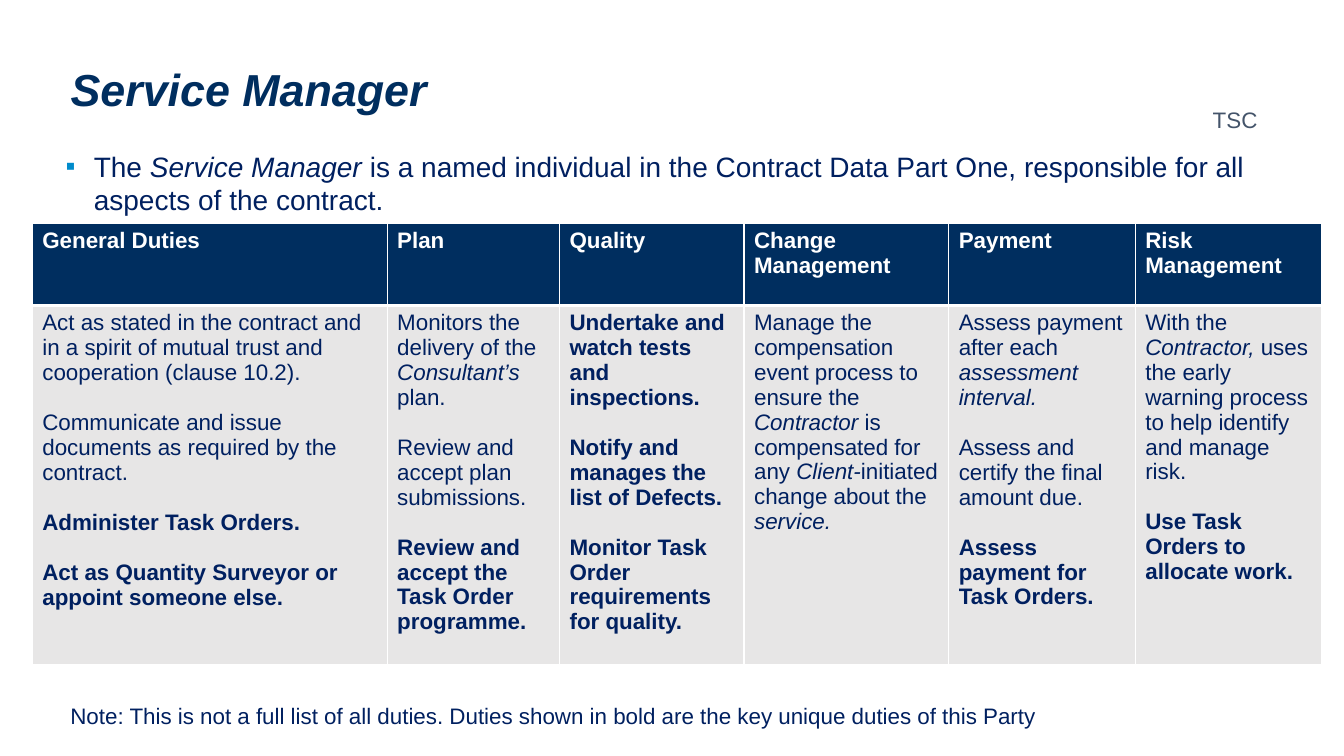
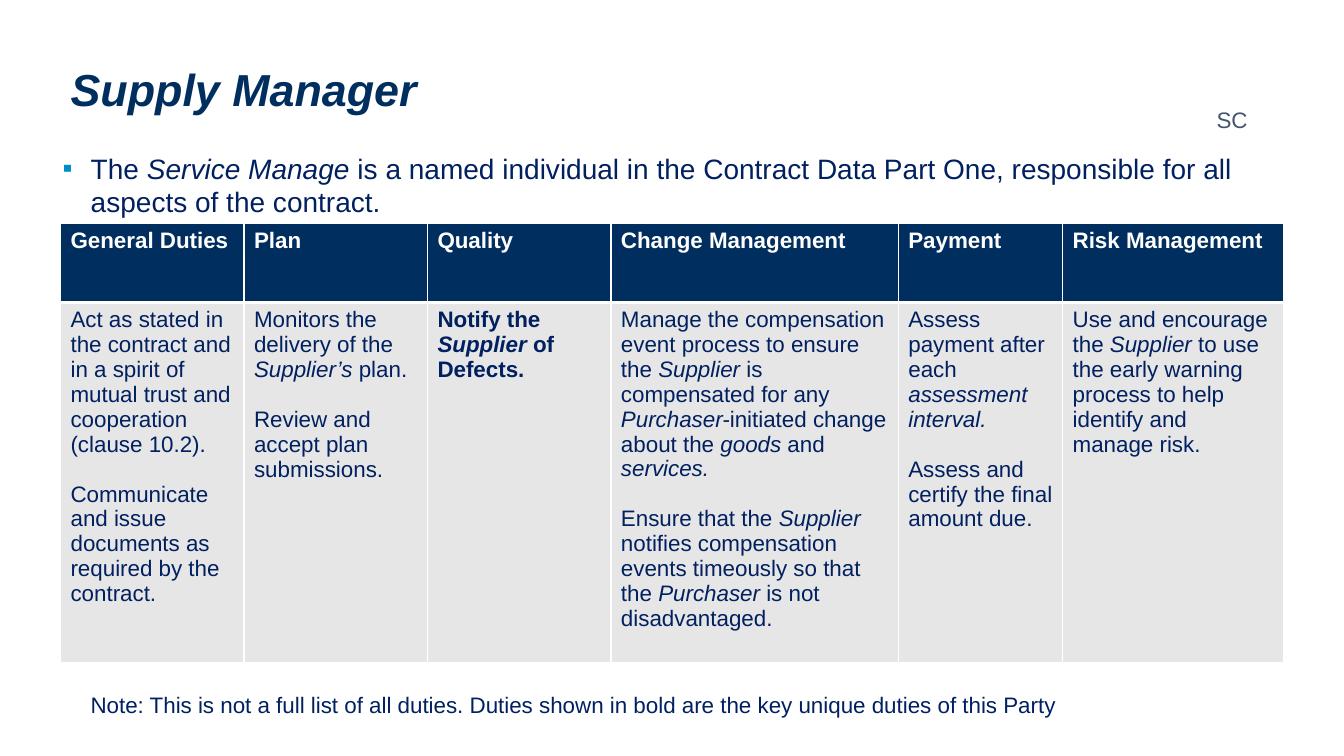
from lxml import etree
from pptx import Presentation
from pptx.dml.color import RGBColor
from pptx.enum.text import MSO_ANCHOR as Anchor, MSO_AUTO_SIZE as AutoSize, PP_ALIGN as Align
from pptx.oxml.ns import qn
from pptx.util import Inches, Pt

COLORS = {
    "navy": "002E5F",
    "ink": "002060",
    "slate": "44546A",
    "bullet": "008BCB",
    "cell": "E7E6E6",
    "white": "FFFFFF",
}
FONT = "Arial"

HEADERS = ["General Duties", "Plan", "Quality", "Change Management", "Payment", "Risk Management"]
NOTE = ("Note: This is not a full list of all duties. "
        "Duties shown in bold are the key unique duties of this Party")

GENERAL_DUTIES = [
    "Act as stated in the contract and in a spirit of mutual trust and cooperation (clause 10.2).",
    "Communicate and issue documents as required by the contract.",
]
PLAN_REVIEW = "Review and accept plan submissions."
PAYMENT_DUTIES = [
    "Assess payment after each *assessment interval.*",
    "Assess and certify the final amount due.",
]

SERVICE_DUTIES = [
    GENERAL_DUTIES + ["**Administer Task Orders.**",
                      "**Act as Quantity Surveyor or appoint someone else.**"],
    ["Monitors the delivery of the *Consultant’s* plan.", PLAN_REVIEW,
     "**Review and accept the Task Order programme.**"],
    ["**Undertake and watch tests and inspections.**",
     "**Notify and manages the list of Defects.**",
     "**Monitor Task Order requirements for quality.**"],
    ["Manage the compensation event process to ensure the *Contractor* is compensated "
     "for any *Client-*initiated change about the *service.*"],
    PAYMENT_DUTIES + ["**Assess payment for Task Orders.**"],
    ["With the *Contractor,* uses the early warning process to help identify and manage risk.",
     "**Use Task Orders to allocate work.**"],
]
SUPPLY_DUTIES = [
    GENERAL_DUTIES,
    ["Monitors the delivery of the *Supplier’s* plan.", PLAN_REVIEW],
    ["**Notify the *Supplier* of Defects.**"],
    ["Manage the compensation event process to ensure the *Supplier* is compensated "
     "for any *Purchaser-*initiated change about the *goods* and *services.*",
     "Ensure that the *Supplier* notifies compensation events timeously so that "
     "the *Purchaser* is not disadvantaged."],
    PAYMENT_DUTIES,
    ["Use and encourage the *Supplier* to use the early warning process "
     "to help identify and manage risk."],
]


def rgb(color):
    return RGBColor.from_string(COLORS[color])


def write(frame, *texts, size=16, color="ink", bold=False, italic=False,
          align=Align.LEFT, gap=0, line=None, bullet=None):
    """Fill a text frame, one paragraph per text; **x** is bold and *x* is italic."""
    for index, text in enumerate(texts):
        paragraph = frame.add_paragraph() if index else frame.paragraphs[0]
        paragraph.alignment = align
        paragraph.space_before = Pt(gap if index else 0)
        if line:
            paragraph.line_spacing = line
        if bullet:
            add_bullet(paragraph, bullet)
        for b, chunk in enumerate(text.split("**")):
            for i, piece in enumerate(chunk.split("*")):
                if not piece:
                    continue
                run = paragraph.add_run()
                run.text = piece
                run.font.name = FONT
                run.font.size = Pt(size)
                run.font.color.rgb = rgb(color)
                run.font.bold = bold or b % 2 == 1
                run.font.italic = italic or i % 2 == 1


def add_bullet(paragraph, char, indent=0.28):
    props = paragraph._p.get_or_add_pPr()
    props.set("marL", str(Inches(indent)))
    props.set("indent", str(-Inches(indent)))
    tint = etree.SubElement(props, qn("a:buClr"))
    etree.SubElement(tint, qn("a:srgbClr"), val=COLORS["bullet"])
    etree.SubElement(props, qn("a:buFont"), typeface=FONT)
    etree.SubElement(props, qn("a:buChar"), char=char)


def paint_cell(cell, fill, **widths):
    """Fill a cell and give it white borders; widths are points by edge tag."""
    props = cell._tc.get_or_add_tcPr()
    for edge in ("lnL", "lnR", "lnT", "lnB"):
        border = etree.SubElement(props, qn(f"a:{edge}"), w=str(Pt(widths.get(edge, 1))))
        solid = etree.SubElement(border, qn("a:solidFill"))
        etree.SubElement(solid, qn("a:srgbClr"), val=COLORS["white"])
    cell.fill.solid()
    cell.fill.fore_color.rgb = rgb(fill)


class Deck:
    def __init__(self):
        self.prs = Presentation()
        self.prs.slide_width, self.prs.slide_height = Inches(13.33), Inches(7.5)
        self.slide = None

    def new_slide(self):
        self.slide = self.prs.slides.add_slide(self.prs.slide_layouts[1])

    def place(self, holder, left, top, width, height, anchor):
        holder.left, holder.top = Inches(left), Inches(top)
        holder.width, holder.height = Inches(width), Inches(height)
        frame = holder.text_frame
        frame.word_wrap = True
        frame.auto_size = AutoSize.NONE
        frame.vertical_anchor = anchor
        return frame

    def title(self, text):
        frame = self.place(self.slide.shapes.title, 0.6, 0.4, 12.13, 1.03, Anchor.MIDDLE)
        write(frame, text, size=32, color="navy", bold=True, italic=True, line=0.9)

    def role(self, name, left, top):
        frame = self.place(self.slide.placeholders[1], left, top, 12.13, 0.88, Anchor.TOP)
        write(frame, f"The *{name}* is a named individual in the Contract Data Part One, "
              "responsible for all aspects of the contract.", size=20, bullet="▪")

    def label(self, text, left, top, width, **style):
        box = self.slide.shapes.add_textbox(Inches(left), Inches(top), Inches(width), Inches(0.37))
        box.text_frame.word_wrap = True
        write(box.text_frame, text, **style)

    def duties(self, columns, left, widths, heights):
        table = self.slide.shapes.add_table(
            2, len(widths), Inches(left), Inches(2.22),
            Inches(sum(widths)), Inches(sum(heights))).table
        for row, height in zip(table.rows, heights):
            row.height = Inches(height)
        for index, (width, header, items) in enumerate(zip(widths, HEADERS, columns)):
            table.columns[index].width = Inches(width)
            head, body = table.cell(0, index), table.cell(1, index)
            paint_cell(head, "navy", lnB=3)
            paint_cell(body, "cell", lnT=3)
            write(head.text_frame, header, color="white", bold=True)
            write(body.text_frame, *items, gap=18)


def main():
    deck = Deck()
    managers = [
        dict(title="Service Manager", role=("Service Manager", 0.55, 1.43),
             contract=("TSC", 11.42), note=(0.6, 6.92),
             table=(SERVICE_DUTIES, 0.32, [3.52, 1.71, 1.83, 2.03, 1.85, 1.85], [0.81, 3.56])),
        dict(title="Supply Manager", role=("Service Manage", 0.52, 1.45),
             contract=("SC", 11.39), note=(0.8, 6.81),
             table=(SUPPLY_DUTIES, 0.6, [1.82, 1.82, 1.82, 2.85, 1.63, 2.19], [0.78, 3.57])),
    ]
    for manager in managers:
        deck.new_slide()
        deck.title(manager["title"])
        deck.role(*manager["role"])
        contract, left = manager["contract"]
        deck.label(contract, left, 1, 1.66, color="slate", align=Align.CENTER)
        deck.duties(*manager["table"])
        deck.label(NOTE, *manager["note"], 9.97)
    deck.prs.save("out.pptx")


if __name__ == "__main__":
    main()
